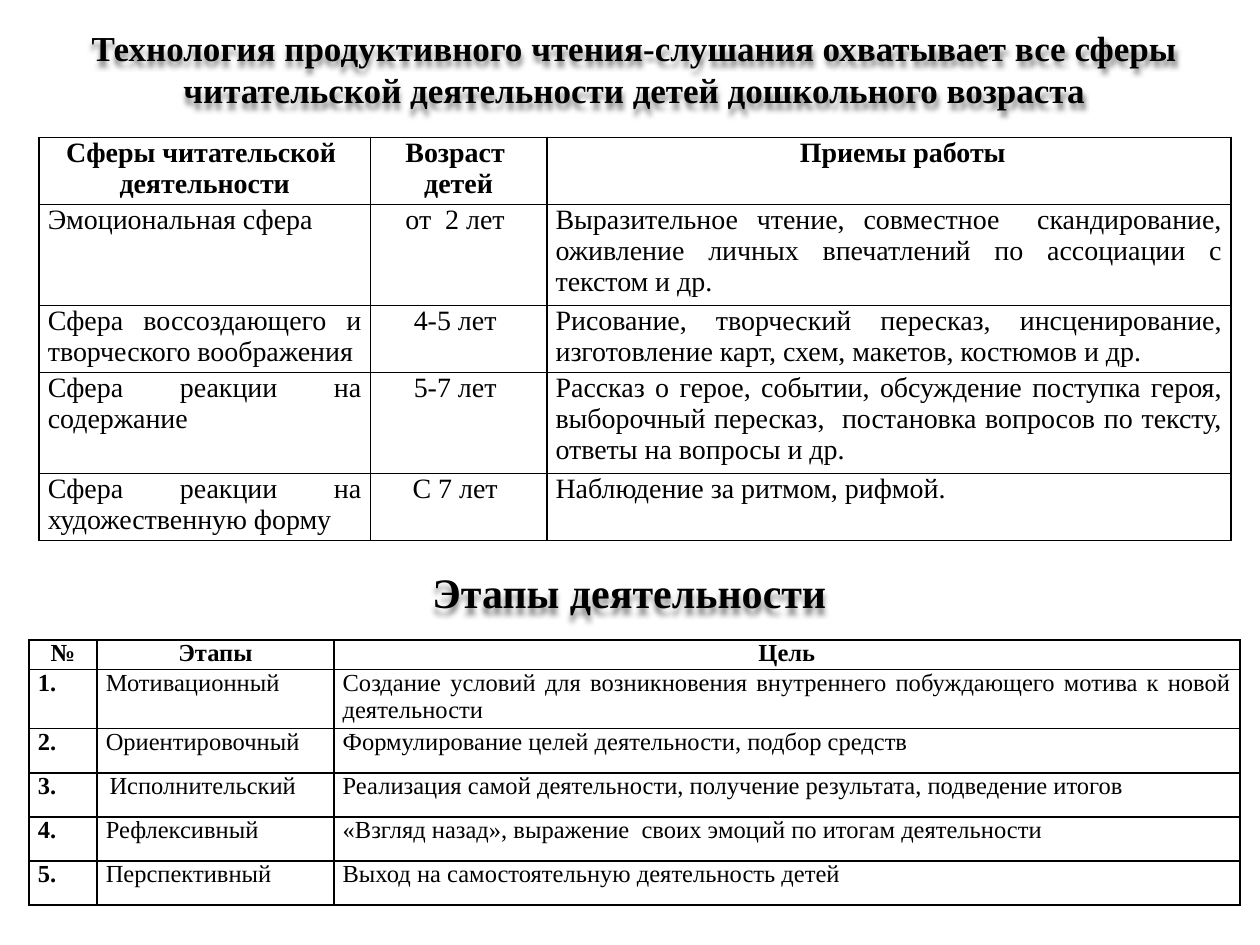
"""Build a slide on productive reading: two headings, each above a ruled table."""
from lxml import etree
from pptx import Presentation
from pptx.dml.color import RGBColor
from pptx.enum import text
from pptx.oxml import parse_xml
from pptx.oxml.ns import nsdecls
from pptx.util import Inches, Pt

THEME = {
    "font": "Times New Roman", "ink": "000000", "rule": Pt(1),
    "title": 20, "subtitle": 24, "spheres": 16, "stages": 14,
}
CENTER, JUSTIFY = text.PP_ALIGN.CENTER, text.PP_ALIGN.JUSTIFY

deck = Presentation()
deck.slide_width, deck.slide_height = Inches(10), Inches(7.5)
COLUMN, ROW = deck.slide_width / 100, deck.slide_height / 75
page = deck.slides.add_slide(deck.slide_layouts[6])


def write(frame, words, size, bold, align, indent=0):
    frame.word_wrap = True
    for number, line in enumerate(words.split("\n")):
        para = frame.add_paragraph() if number else frame.paragraphs[0]
        para.alignment = align
        if indent:
            para._p.get_or_add_pPr().set("indent", str(int(indent * COLUMN)))
        span = para.add_run()
        span.text = line
        span.font.name, span.font.size, span.font.bold = THEME["font"], Pt(size), bold
        span.font.color.rgb = RGBColor.from_string(THEME["ink"])


headings = [
    ((2.3, 1.6, 96.1, 7.7), "title", text.MSO_ANCHOR.TOP,
     "Технология продуктивного чтения-слушания охватывает все сферы "
     "читательской деятельности детей дошкольного возраста"),
    ((31.2, 44.5, 37.5, 5), "subtitle", text.MSO_ANCHOR.MIDDLE, "Этапы деятельности"),
]
for (left, top, width, height), role, anchor, words in headings:
    box = page.shapes.add_textbox(int(left * COLUMN), int(top * ROW),
                                  int(width * COLUMN), int(height * ROW))
    write(box.text_frame, words, THEME[role], True, CENTER)
    box.text_frame.vertical_anchor = anchor
    box.text_frame.auto_size = text.MSO_AUTO_SIZE.SHAPE_TO_FIT_TEXT
    box._element.spPr.append(parse_xml(
        f'<a:effectLst {nsdecls("a")}><a:outerShdw blurRad="38100" dist="38100" dir="5400000">'
        f'<a:srgbClr val="{THEME["ink"]}"><a:alpha val="45000"/></a:srgbClr>'
        '</a:outerShdw></a:effectLst>'))

spheres = [
    ("Сферы читательской \nдеятельности", "Возраст \nдетей", "Приемы работы"),
    ("Эмоциональная сфера ", "от  2 лет ",
     "Выразительное чтение, совместное  скандирование, оживление личных впечатлений "
     "по ассоциации с текстом и др. "),
    ("Сфера воссоздающего и творческого воображения ", "4-5 лет ",
     "Рисование, творческий пересказ, инсценирование, изготовление карт, схем, "
     "макетов, костюмов и др. "),
    ("Сфера реакции на содержание ", "5-7 лет ",
     "Рассказ о герое, событии, обсуждение поступка героя, выборочный пересказ,  "
     "постановка вопросов по тексту, ответы на вопросы и др. "),
    ("Сфера реакции на художественную форму ", "С 7 лет ", "Наблюдение за ритмом, рифмой. "),
]
stages = [
    ("№", "Этапы", "Цель"),
    ("1.", "Мотивационный",
     "Создание условий для возникновения внутреннего побуждающего мотива к новой деятельности"),
    ("2.", "Ориентировочный", "Формулирование целей деятельности, подбор средств"),
    ("3.", "Исполнительский",
     "Реализация самой деятельности, получение результата, подведение итогов"),
    ("4.", "Рефлексивный", "«Взгляд назад», выражение  своих эмоций по итогам деятельности"),
    ("5.", "Перспективный", "Выход на самостоятельную деятельность детей"),
]
tables = [
    {"role": "spheres", "rows": spheres, "at": (3.1, 10.9), "widths": (26.3, 14, 54.3),
     "heights": (5.3, 8, 5.3, 8, 5.3), "aligns": (JUSTIFY, CENTER, JUSTIFY),
     "bold_column": None, "indents": {(0, 2): 2.2}},
    {"role": "stages", "rows": stages, "at": (2.3, 50.8), "widths": (5.4, 18.8, 71.9),
     "heights": (2.3, 4.7) + (3.5,) * 4, "aligns": (JUSTIFY,) * 3,
     "bold_column": 0, "indents": {(3, 1): 0.3}},
]
for plan in tables:
    left, top = plan["at"]
    grid = page.shapes.add_table(
        len(plan["rows"]), len(plan["widths"]), int(left * COLUMN), int(top * ROW),
        int(sum(plan["widths"]) * COLUMN), int(sum(plan["heights"]) * ROW)).table
    grid.first_row = grid.horz_banding = False
    for column, width in zip(grid.columns, plan["widths"]):
        column.width = int(width * COLUMN)
    for row, height in zip(grid.rows, plan["heights"]):
        row.height = int(height * ROW)
    for r, entries in enumerate(plan["rows"]):
        for c, words in enumerate(entries):
            cell = grid.cell(r, c)
            cell.margin_left = cell.margin_right = int(0.7 * COLUMN)
            cell.margin_top = cell.margin_bottom = 0
            write(cell.text_frame, words, THEME[plan["role"]],
                  r == 0 or c == plan["bold_column"],
                  plan["aligns"][c] if r else CENTER, plan["indents"].get((r, c), 0))
            properties = cell._tc.get_or_add_tcPr()
            for side in "LRTB":
                properties.append(etree.fromstring(
                    f'<a:ln{side} {nsdecls("a")} w="{THEME["rule"]}"><a:solidFill>'
                    f'<a:srgbClr val="{THEME["ink"]}"/></a:solidFill></a:ln{side}>'))
            cell.fill.background()

deck.save("out.pptx")
